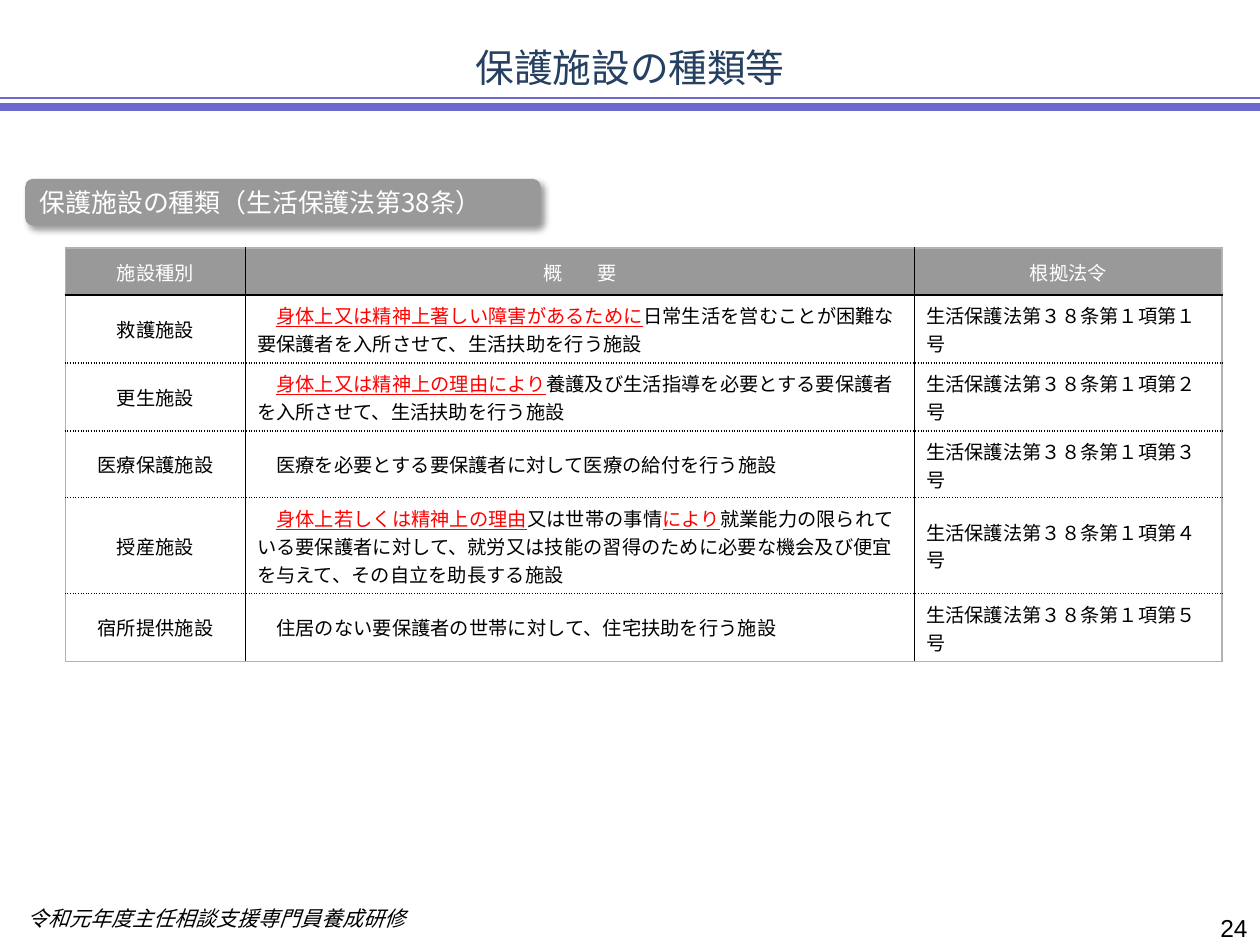
"""Build the slide listing the types of public assistance facilities."""
from lxml import etree
from pptx import Presentation
from pptx.dml.color import RGBColor
from pptx.enum.shapes import MSO_CONNECTOR, MSO_SHAPE
from pptx.enum.text import MSO_ANCHOR, PP_ALIGN
from pptx.oxml import parse_xml
from pptx.oxml.ns import nsdecls, qn
from pptx.util import Inches, Pt

STRAIGHT = MSO_CONNECTOR.STRAIGHT
ROUNDED = MSO_SHAPE.ROUNDED_RECTANGLE
MIDDLE = MSO_ANCHOR.MIDDLE
LEFT, CENTER, RIGHT = PP_ALIGN.LEFT, PP_ALIGN.CENTER, PP_ALIGN.RIGHT

WHITE = RGBColor(0xFF, 0xFF, 0xFF)
BLACK = RGBColor(0, 0, 0)
RED = RGBColor(0xFF, 0, 0)
GRAY = RGBColor(0x99, 0x99, 0x99)
SILVER = RGBColor(0xB2, 0xB2, 0xB2)
NAVY = RGBColor(0x25, 0x40, 0x61)
VIOLET = RGBColor(0x6B, 0x6B, 0xCF)
GOTHIC, ARIAL = "Noto Sans CJK JP", "Arial"


def style(paragraph, size, color, face, align=LEFT):
    paragraph.alignment = align
    font = paragraph.font
    font.size = Pt(size)
    font.color.rgb = color
    font.name = face
    defaults = paragraph._p.pPr.find(qn("a:defRPr"))
    etree.SubElement(defaults, qn("a:ea")).set("typeface", GOTHIC)


def set_borders(cell, dotted_sides, outer_sides):
    properties = cell._tc.get_or_add_tcPr()
    for position, side in enumerate("LRTB"):
        dash = "sysDot" if side in dotted_sides else "solid"
        color = SILVER if side in outer_sides else BLACK
        properties.insert(position, parse_xml(
            f'<a:ln{side} {nsdecls("a")} w="12700"><a:solidFill>'
            f'<a:srgbClr val="{color}"/></a:solidFill>'
            f'<a:prstDash val="{dash}"/></a:ln{side}>'))


prs = Presentation()
prs.slide_width, prs.slide_height = Inches(10), Inches(7.5)
slide = prs.slides.add_slide(prs.slide_layouts[6])
shapes = slide.shapes

heading = shapes.add_shape(ROUNDED, Inches(0.2), Inches(1.42), Inches(4.09), Inches(0.37))
heading.fill.solid()
heading.fill.fore_color.rgb = GRAY
heading.line.fill.background()
heading.shadow.inherit = False
heading._element.spPr.find(qn("a:effectLst")).append(parse_xml(
    f'<a:outerShdw {nsdecls("a")} blurRad="50800" dist="38100" dir="2700000">'
    '<a:srgbClr val="000000"><a:alpha val="40000"/></a:srgbClr></a:outerShdw>'))
heading.text_frame.vertical_anchor = MIDDLE
heading.text_frame.text = "保護施設の種類（生活保護法第38条）"
style(heading.text_frame.paragraphs[0], 14.8, WHITE, GOTHIC)

for y, width in [(0.78, 1), (0.85, 4.5)]:
    rule = shapes.add_connector(STRAIGHT, Inches(0), Inches(y), Inches(10), Inches(y))
    rule.line.color.rgb = VIOLET
    rule.line.width = Pt(width)
    etree.SubElement(rule._element.spPr, qn("a:effectLst"))

captions = [
    ("保護施設の種類等", (0, 0.3, 10, 0.53), 22.1, NAVY, GOTHIC, CENTER, False, False),
    ("令和元年度主任相談支援専門員養成研修", (0.12, 7.14, 3.94, 0.3), 12, BLACK, GOTHIC, LEFT, True, True),
    ("24", (7.67, 7.2, 2.33, 0.29), 14, BLACK, ARIAL, RIGHT, False, True),
]
for text, place, size, color, face, align, italic, wrap in captions:
    caption = shapes.add_textbox(*map(Inches, place)).text_frame
    caption.word_wrap = wrap
    caption.text = text
    style(caption.paragraphs[0], size, color, face, align)
    caption.paragraphs[0].font.italic = italic

headers = ["施設種別", "概　要", "根拠法令"]
facilities = [
    ("救護施設", [
        ("　", False),
        ("身体上又は精神上著しい障害があるために", True),
        ("日常生活を営むことが困難な要保護者を入所させて、生活扶助を行う施設", False)]),
    ("更生施設", [
        ("　", False),
        ("身体上又は精神上の理由により", True),
        ("養護及び生活指導を必要とする要保護者を入所させて、生活扶助を行う施設", False)]),
    ("医療保護施設", [
        ("　医療を必要とする要保護者に対して医療の給付を行う施設", False)]),
    ("授産施設", [
        ("　", False),
        ("身体上若しくは精神上の理由", True),
        ("又は世帯の事情", False),
        ("により", True),
        ("就業能力の限られている要保護者に対して、就労又は技能の習得のために"
         "必要な機会及び便宜を与えて、その自立を助長する施設", False)]),
    ("宿所提供施設", [
        ("　住居のない要保護者の世帯に対して、住宅扶助を行う施設", False)]),
]
rows = [[[(header, False)] for header in headers]]
for name, summary in facilities:
    numeral = "０１２３４５"[len(rows)]
    rows.append([[(name, False)], summary, [(f"生活保護法第３８条第１項第{numeral}号", False)]])

table = shapes.add_table(len(rows), len(headers), Inches(0.52), Inches(1.97),
                         Inches(9.18), Inches(3.28)).table
table.first_row = table.horz_banding = False
for column, width in zip(table.columns, [1.43, 5.31, 2.44]):
    column.width = Inches(width)
for row, height in zip(table.rows, [0.37, 0.54, 0.54, 0.53, 0.76, 0.54]):
    row.height = Inches(height)

last = len(rows) - 1
for r, row in enumerate(rows):
    dotted_sides = ("T" if r > 1 else "") + ("B" if 0 < r < last else "")
    for c, pieces in enumerate(row):
        cell = table.cell(r, c)
        cell.margin_left = cell.margin_right = Inches(0.09)
        cell.margin_top = cell.margin_bottom = Inches(0.05)
        cell.vertical_anchor = MIDDLE
        cell.fill.solid()
        cell.fill.fore_color.rgb = WHITE if r else GRAY
        outer_sides = "L  R"[c * 3 // 2] + {0: "T", last: "B"}.get(r, "")
        set_borders(cell, dotted_sides, outer_sides)
        paragraph = cell.text_frame.paragraphs[0]
        style(paragraph, 11, BLACK if r else WHITE, ARIAL, CENTER if r == 0 or c == 0 else LEFT)
        for text, stressed in pieces:
            run = paragraph.add_run()
            run.text = text
            if stressed:
                run.font.color.rgb = RED
                run.font.underline = True

summary_header = table.cell(0, 1).text_frame.paragraphs[0].runs[0]
summary_header._r.get_or_add_rPr().set("spc", "450")

prs.save("out.pptx")
